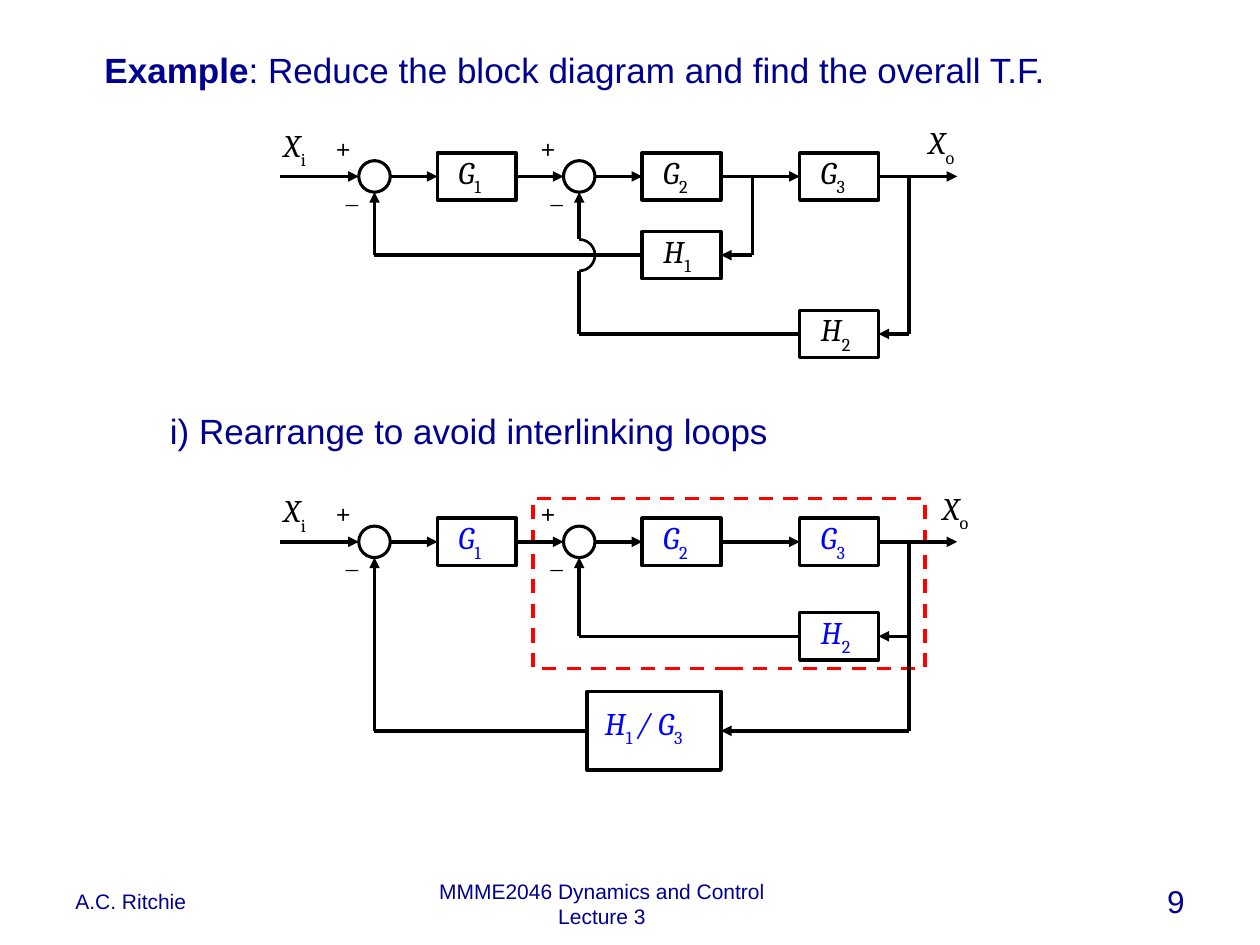
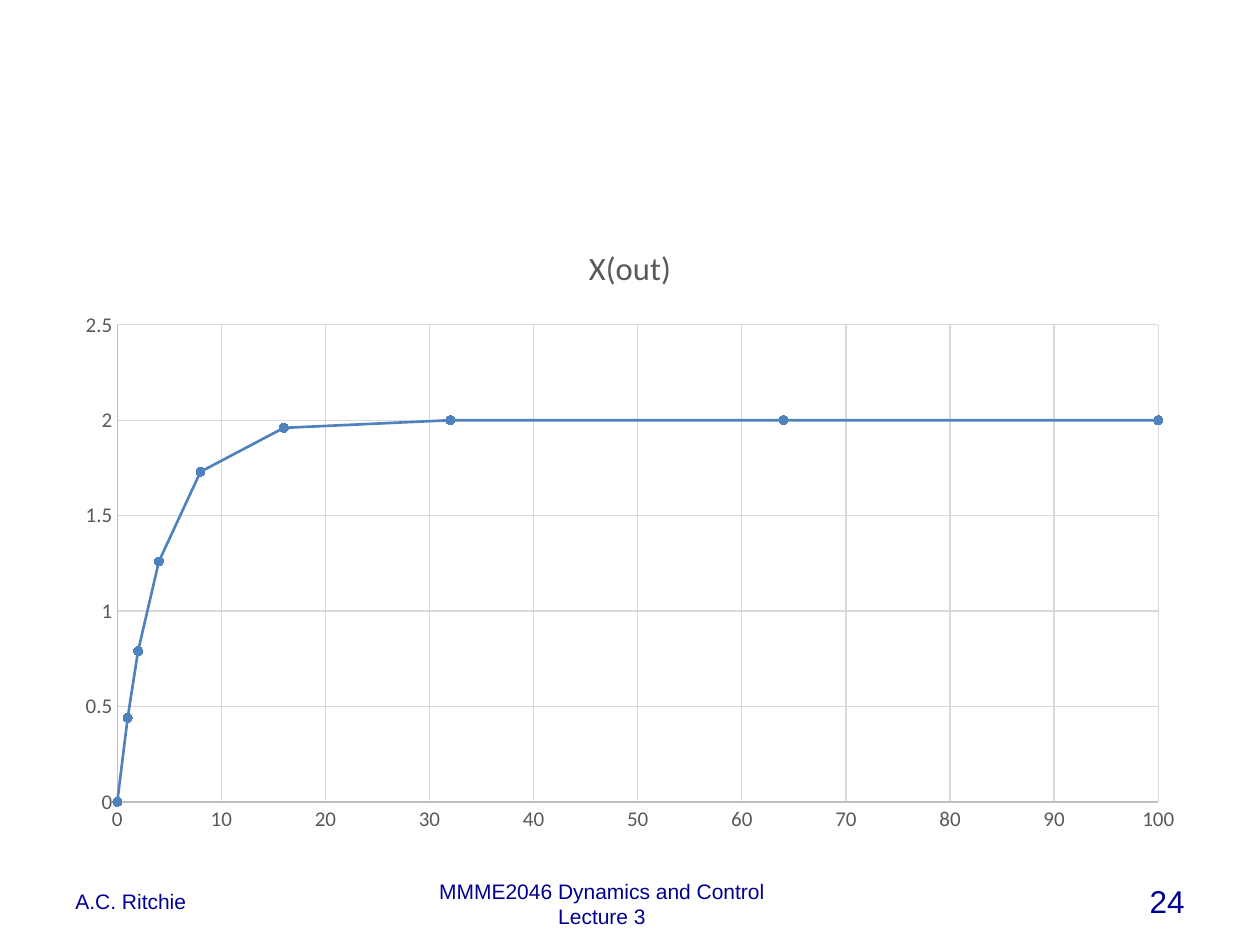
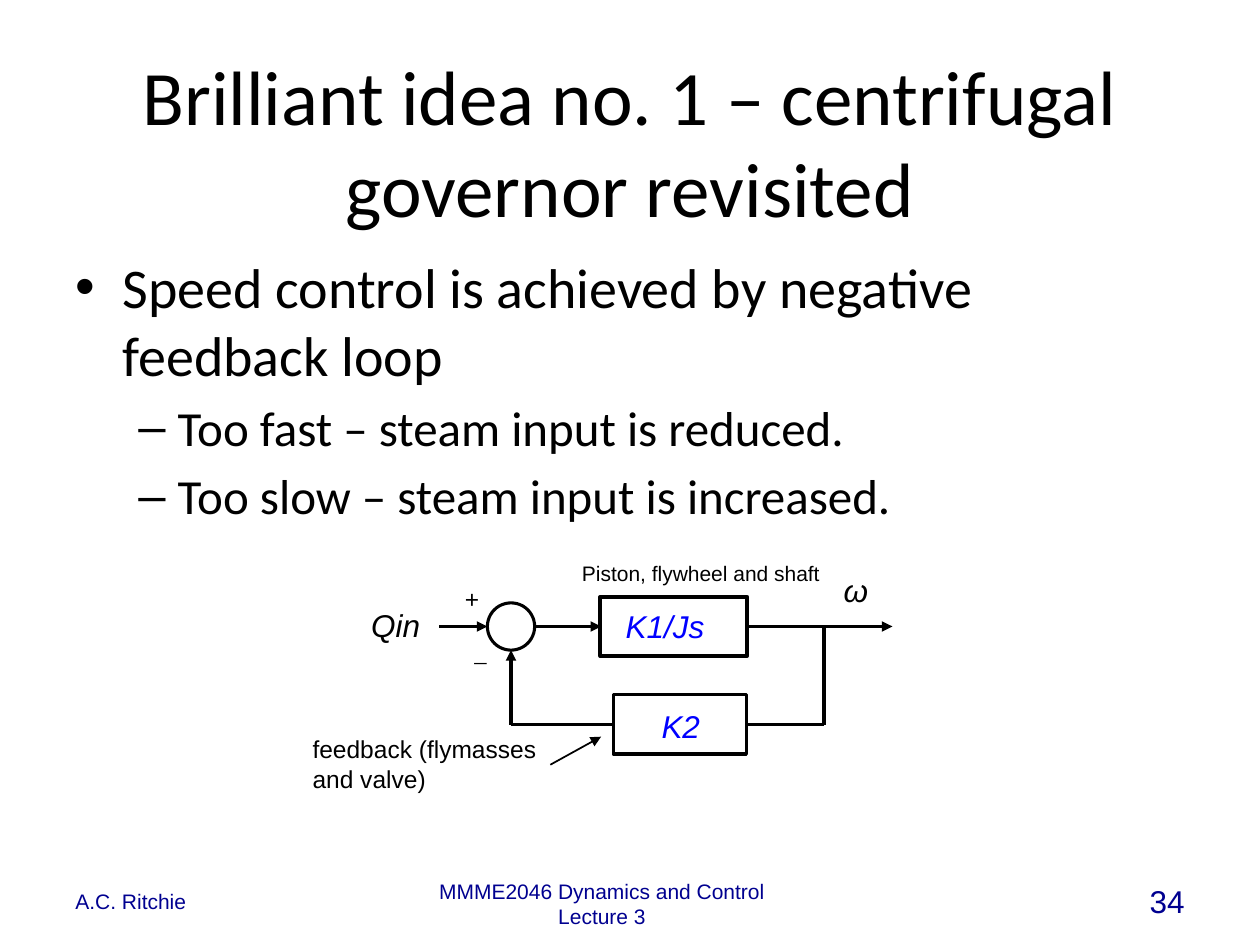
from lxml.etree import SubElement
from pptx import Presentation
from pptx.chart.data import XyChartData
from pptx.dml.color import RGBColor
from pptx.enum.chart import XL_CHART_TYPE, XL_MARKER_STYLE, XL_TICK_MARK
from pptx.enum.dml import MSO_LINE
from pptx.enum.shapes import MSO_CONNECTOR, MSO_SHAPE
from pptx.enum.text import MSO_ANCHOR, MSO_AUTO_SIZE, PP_ALIGN
from pptx.oxml.ns import qn
from pptx.util import Pt

BLACK, WHITE, NAVY, BLUE, RED = "000000", "FFFFFF", "000090", "0000FF", "FF0000"
GREY, AXIS, GRID, SERIES = "595959", "BFBFBF", "D9D9D9", "4F81BD"
TITLE_ONLY, BLANK = 5, 6
BLOCK_W, BLOCK_H = 45, 27
G1_X, G2_X, G3_X = 250, 367, 457
SUM_R, SUM1_X, SUM2_X = 9, 214, 331
OUT_X = 519.5


def rgb(color):
    """Turn a hex string into a colour."""
    return RGBColor.from_string(color)


def place(sp, x, y, w, h):
    """Set the position and size of a shape in points."""
    sp.left, sp.top, sp.width, sp.height = Pt(x), Pt(y), Pt(w), Pt(h)


def style_font(font, size, color=BLACK, name="Arial", italic=False):
    """Format a font."""
    font.size, font.name, font.italic = Pt(size), name, italic
    font.color.rgb = rgb(color)


def style_line(line, color=BLACK, width=2):
    """Format an outline."""
    line.color.rgb = rgb(color)
    line.width = Pt(width)


def write_symbols(tf, parts, size=18, color=BLACK, name="Cambria"):
    """Write italic symbols, with every second part as a subscript."""
    p = tf.paragraphs[0]
    p.alignment = PP_ALIGN.LEFT
    for i, part in enumerate(parts):
        r = p.add_run()
        r.text = part
        subscript = i % 2 == 1
        style_font(r.font, size, color, name, not subscript)
        if subscript:
            r._r.get_or_add_rPr().set("baseline", "-30000")


def add_text(slide, box, text="", size=14, color=BLACK, name="Arial",
             align=PP_ALIGN.LEFT, anchor=MSO_ANCHOR.TOP):
    """Add a text box and return its text frame."""
    tf = slide.shapes.add_textbox(*map(Pt, box)).text_frame
    tf.word_wrap = True
    tf.vertical_anchor = anchor
    tf.text = text
    for p in tf.paragraphs:
        p.alignment = align
        for r in p.runs:
            style_font(r.font, size, color, name)
    return tf


def add_symbol(slide, x, y, parts, name="Cambria"):
    """Add a free-standing signal name."""
    write_symbols(add_text(slide, (x, y, 49, 27)), parts, name=name)


def add_title(slide, box, text, size, color, name, align):
    """Place and format the title placeholder and return its paragraph."""
    title = slide.shapes.title
    place(title, *box)
    tf = title.text_frame
    tf.text = text
    tf.auto_size = MSO_AUTO_SIZE.NONE
    tf.vertical_anchor = MSO_ANCHOR.TOP
    p = tf.paragraphs[0]
    p.alignment = align
    style_font(p.runs[0].font, size, color, name)
    return p


def add_outline(slide, kind, box, width=2, color=BLACK, fill=WHITE):
    """Add an outlined shape, filled unless fill is None."""
    sp = slide.shapes.add_shape(kind, *map(Pt, box))
    sp.shadow.inherit = False
    style_line(sp.line, color, width)
    if fill:
        sp.fill.solid()
        sp.fill.fore_color.rgb = rgb(fill)
    else:
        sp.fill.background()
    return sp


def add_block(slide, box, parts, color, inset=(12, 0), name="Cambria"):
    """Add a transfer function block."""
    tf = add_outline(slide, MSO_SHAPE.RECTANGLE, box).text_frame
    tf.margin_left, tf.margin_top = map(Pt, inset)
    tf.margin_right = tf.margin_bottom = 0
    tf.word_wrap = False
    tf.vertical_anchor = MSO_ANCHOR.TOP
    write_symbols(tf, parts, color=color, name=name)


def add_small_block(slide, x, y, parts, color):
    """Add a standard block centred on the height y."""
    add_block(slide, (x, y - BLOCK_H / 2, BLOCK_W, BLOCK_H), parts, color)


def add_sum(slide, x, y, radius=SUM_R):
    """Add a summing junction with its plus and minus signs."""
    add_outline(slide, MSO_SHAPE.OVAL,
                (x - radius, y - radius, 2 * radius, 2 * radius), 1.75)
    add_text(slide, (x - radius - 20, y - 28, 27, 18), "+")
    add_text(slide, (x - radius - 14.5, y + radius - 11, 27, 18), "_",
             name="Times New Roman")


def add_wire(slide, *points, arrow=True, width=2):
    """Join points with straight connectors, the last with an arrowhead."""
    for start, end in zip(points, points[1:]):
        cxn = slide.shapes.add_connector(
            MSO_CONNECTOR.STRAIGHT, *map(Pt, start + end))
        style_line(cxn.line, BLACK, width)
        sp_pr = cxn.element.spPr
        if arrow and end == points[-1]:
            SubElement(sp_pr.find(qn("a:ln")), qn("a:tailEnd"), type="triangle")
        SubElement(sp_pr, qn("a:effectLst"))


def add_forward_path(slide, y, color, out_label_x):
    """Add the chain from input to output shared by both block diagrams."""
    stops = [(160, SUM1_X - SUM_R), (SUM1_X + SUM_R, G1_X),
             (G1_X + BLOCK_W, SUM2_X - SUM_R), (SUM2_X + SUM_R, G2_X),
             (G2_X + BLOCK_W, G3_X), (G3_X + BLOCK_W, 547)]
    for start, end in stops:
        add_wire(slide, (start, y), (end, y))
    for x in (SUM1_X, SUM2_X):
        add_sum(slide, x, y)
    for x, index in ((G1_X, "1"), (G2_X, "2"), (G3_X, "3")):
        add_small_block(slide, x, y, ("G", index), color)
    add_symbol(slide, 155, y - 32.5, ("X", "i"))
    add_symbol(slide, out_label_x, y - 34, ("X", "o"))


def add_interlinked_diagram(slide, y):
    """Add the block diagram with interlinking loops."""
    inner, outer = y + 45, y + 90
    tap, sum_foot = 430, y + SUM_R
    add_wire(slide, (tap, y), (tap, inner), (G2_X + BLOCK_W, inner))
    add_wire(slide, (G2_X, inner), (SUM1_X, inner), (SUM1_X, sum_foot))
    add_wire(slide, (OUT_X, y), (OUT_X, outer), (G3_X + BLOCK_W, outer))
    add_wire(slide, (G3_X, outer), (SUM2_X, outer), (SUM2_X, inner + SUM_R),
             arrow=False)
    add_wire(slide, (SUM2_X, inner - SUM_R), (SUM2_X, sum_foot))
    hop = add_outline(slide, MSO_SHAPE.ARC,
                      (SUM2_X - SUM_R, inner - SUM_R, 2 * SUM_R, 2 * SUM_R),
                      1.5, fill=None)
    hop.adjustments[1] = 54
    add_forward_path(slide, y, BLACK, 523.5)
    add_small_block(slide, G2_X, inner, ("H", "1"), BLACK)
    add_small_block(slide, G3_X, outer, ("H", "2"), BLACK)


def add_nested_diagram(slide, y):
    """Add the block diagram with nested loops."""
    inner, outer = y + 54, y + 108
    sum_foot, block_x = y + SUM_R, 335.5
    frame = add_outline(slide, MSO_SHAPE.RECTANGLE, (304.5, 285, 224, 97),
                        color=RED, fill=None)
    frame.line.dash_style = MSO_LINE.DASH
    add_wire(slide, (OUT_X, y), (OUT_X, outer), (G2_X + BLOCK_W, outer))
    add_wire(slide, (OUT_X, inner), (G3_X + BLOCK_W, inner))
    add_wire(slide, (G3_X, inner), (SUM2_X, inner), (SUM2_X, sum_foot))
    add_wire(slide, (block_x, outer), (SUM1_X, outer), (SUM1_X, sum_foot))
    add_forward_path(slide, y, BLUE, 531.5)
    add_small_block(slide, G3_X, inner, ("H", "2"), BLUE)
    add_block(slide, (block_x, outer - 22.5, 76.5, 45),
              ("H", "1 ", "/ G", "3"), BLUE, (10, 7))


def add_governor_diagram(slide, y):
    """Add the speed control loop of the governor."""
    sum_x, radius, tap, loop_y = 292, 13.5, 471, 414
    add_wire(slide, (251, y), (sum_x - radius, y))
    add_wire(slide, (sum_x + radius, y), (343.5, y))
    add_wire(slide, (427, y), (510, y))
    add_wire(slide, (tap, y), (tap, loop_y), (426, loop_y), arrow=False)
    add_wire(slide, (351, loop_y), (sum_x, loop_y), (sum_x, y + radius))
    add_wire(slide, (314.5, 437), (343.5, 421), width=1)
    add_sum(slide, sum_x, y, radius)
    add_block(slide, (343, y - 17, 84, 34), ("K1/Js",), BLUE, (14.5, 6), "Arial")
    add_block(slide, (350.5, loop_y - 17, 76, 34), ("K2",), BLUE, (27.5, 7), "Arial")
    add_symbol(slide, 205, 342.5, ("Qin",), "Arial")
    add_symbol(slide, 475, 322.5, ("ω",), "Arial")
    add_text(slide, (325.5, 317, 160, 22), "Piston, flywheel and shaft", 12)
    add_text(slide, (171.5, 416, 143, 41), "feedback (flymasses and valve)")


def add_bullets(slide, box, items):
    """Add a bulleted list of (level, text) items."""
    levels = [(32, 27, -27, "•"), (28, 58.5, -22.5, "–")]
    tf = add_text(slide, box, "\n".join(text for _, text in items))
    for p, (level, _) in zip(tf.paragraphs, items):
        size, margin, indent, mark = levels[level]
        style_font(p.runs[0].font, size, name="Calibri")
        p.level = level
        p.space_before = Pt(size * 0.2)
        p_pr = p._p.get_or_add_pPr()
        p_pr.set("marL", str(Pt(margin)))
        p_pr.set("indent", str(Pt(indent)))
        SubElement(p_pr, qn("a:buFont"), typeface="Arial")
        SubElement(p_pr, qn("a:buChar"), char=mark)


def add_response_chart(slide, box):
    """Add the smooth step response chart."""
    data = XyChartData()
    response = data.add_series("X(out)")
    for time, value in zip((0, 1, 2, 4, 8, 16, 32, 64, 100),
                           (0, 0.44, 0.79, 1.26, 1.73, 1.96, 2, 2, 2)):
        response.add_data_point(time, value)
    chart = slide.shapes.add_chart(
        XL_CHART_TYPE.XY_SCATTER_SMOOTH, *map(Pt, box), data).chart
    style_font(chart.font, 10, name="Calibri")
    chart.has_legend = False
    chart.has_title = True
    tf = chart.chart_title.text_frame
    tf.text = "X(out)"
    style_font(tf.paragraphs[0].runs[0].font, 18.6, GREY, "Calibri")
    tf.paragraphs[0].runs[0].font.bold = False
    for axis, top, step in ((chart.category_axis, 100, 10),
                            (chart.value_axis, 2.5, 0.5)):
        axis.minimum_scale, axis.maximum_scale, axis.major_unit = 0, top, step
        axis.major_tick_mark = axis.minor_tick_mark = XL_TICK_MARK.NONE
        axis.has_major_gridlines = True
        style_line(axis.major_gridlines.format.line, GRID, 0.75)
        style_line(axis.format.line, AXIS, 0.75)
        style_font(axis.tick_labels.font, 12, GREY, "Calibri")
        axis.tick_labels.number_format = "General"
        axis.tick_labels.number_format_is_linked = False
    plot = chart.plots[0]
    plot.vary_by_categories = False
    series = plot.series[0]
    series.smooth = True
    style_line(series.format.line, SERIES, 1.5)
    marker = series.marker
    marker.style, marker.size = XL_MARKER_STYLE.CIRCLE, 5
    marker.format.fill.solid()
    marker.format.fill.fore_color.rgb = rgb(SERIES)
    style_line(marker.format.line, SERIES, 0.75)


def add_footer(slide, number):
    """Add the author, course and slide number."""
    middle = MSO_ANCHOR.MIDDLE
    add_text(slide, (36, 500.5, 168, 29), "A.C. Ritchie", 12, NAVY, anchor=middle)
    add_text(slide, (220, 502, 248, 29),
             "MMME2046 Dynamics and Control\nLecture 3", 12, NAVY,
             align=PP_ALIGN.CENTER, anchor=middle)
    add_text(slide, (516, 500.5, 168, 29), str(number), 18, NAVY,
             align=PP_ALIGN.RIGHT, anchor=middle)


def add_slide(prs, layout, number):
    """Add a slide with its footer."""
    slide = prs.slides.add_slide(prs.slide_layouts[layout])
    add_footer(slide, number)
    return slide


def main():
    """Build the three lecture slides."""
    prs = Presentation()
    prs.slide_width, prs.slide_height = Pt(720), Pt(540)

    s = add_slide(prs, TITLE_ONLY, 9)
    p = add_title(s, (52.5, 24, 600, 32), "Example", 20, NAVY, "Arial", PP_ALIGN.LEFT)
    p.runs[0].font.bold = True
    r = p.add_run()
    r.text = ": Reduce the block diagram and find the overall T.F."
    style_font(r.font, 20, NAVY)
    add_interlinked_diagram(s, 100.8)
    add_text(s, (90, 230.5, 400, 32), "i) Rearrange to avoid interlinking loops",
             20, NAVY)
    add_nested_diagram(s, 309.6)

    s = add_slide(prs, BLANK, 24)
    add_response_chart(s, (36, 126, 648, 356.5))

    s = add_slide(prs, TITLE_ONLY, 34)
    add_title(s, (36, 24, 648, 90),
              "Brilliant idea no. 1 – centrifugal governor revisited",
              44, BLACK, "Calibri", PP_ALIGN.CENTER)
    add_bullets(s, (36, 141, 648, 341), [
        (0, "Speed control is achieved by negative feedback loop"),
        (1, "Too fast – steam input is reduced."),
        (1, "Too slow – steam input is increased."),
    ])
    add_governor_diagram(s, 358)

    prs.save("out.pptx")


if __name__ == "__main__":
    main()
